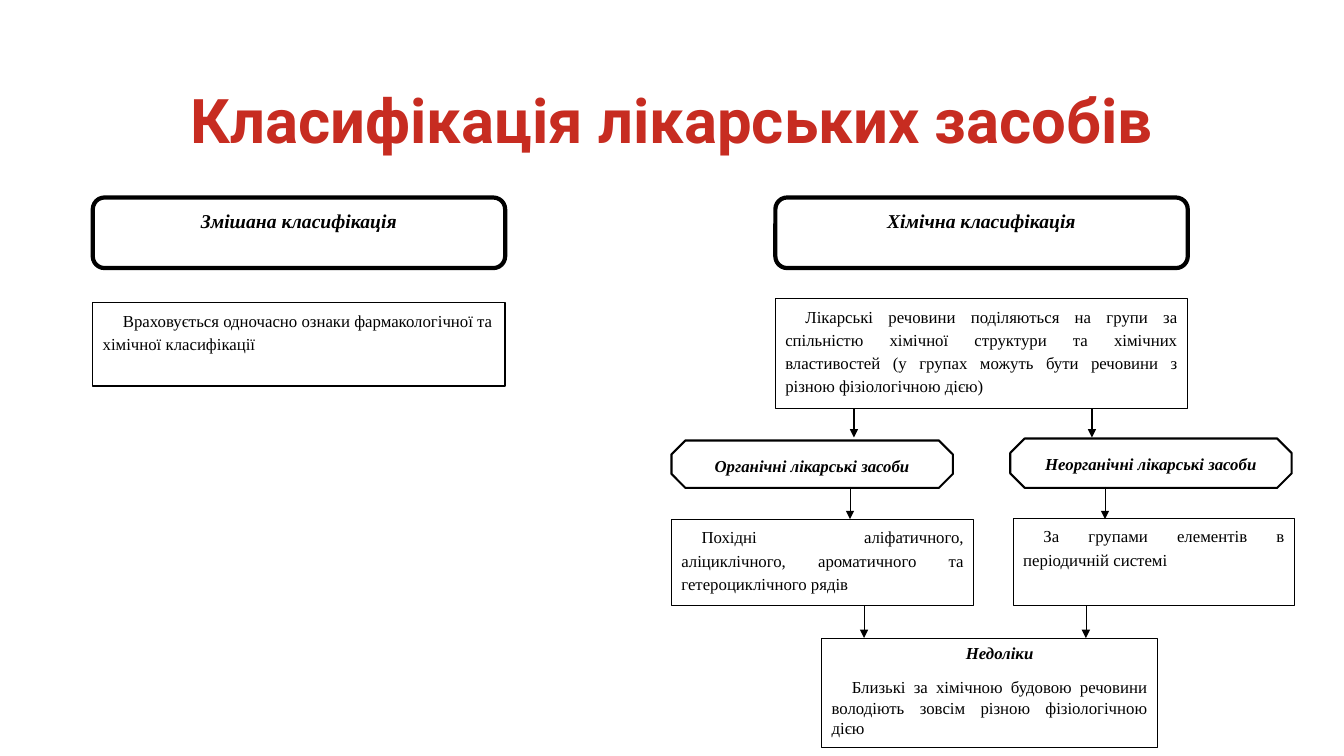
from lxml.etree import SubElement
from pptx import Presentation
from pptx.dml.color import RGBColor
from pptx.enum.shapes import MSO_CONNECTOR, MSO_SHAPE
from pptx.enum.text import MSO_ANCHOR, PP_ALIGN
from pptx.oxml.ns import qn
from pptx.util import Inches, Pt

COLORS = {"title": "C72C21", "ink": "000000", "paper": "FFFFFF"}
BODY_FONT = "Times New Roman"
HEADING = {"size": Pt(14), "bold": True, "italic": True}
LABEL = {"size": Pt(12), "bold": True, "italic": True}
BODY = {"size": Pt(12)}
FIRST_LINE = Inches(0.2)


class ClassificationSlide:
    """Draws the titled boxes and arrows of a classification scheme."""

    def __init__(self, presentation):
        self.slide = presentation.slides.add_slide(presentation.slide_layouts[6])

    def fill_paragraph(self, paragraph, text, style, align, spacing=1.15, indent=0,
                       font=BODY_FONT, color="ink"):
        layout = {"alignment": align, "line_spacing": spacing, "space_after": Pt(10)}
        for name, value in layout.items():
            setattr(paragraph, name, value)
        if indent:
            properties = paragraph._p.get_or_add_pPr()
            properties.set("marL", "0")
            properties.set("indent", str(indent))
        run = paragraph.add_run()
        run.text = text
        for name, value in {"name": font, **style}.items():
            setattr(run.font, name, value)
        run.font.color.rgb = RGBColor.from_string(COLORS[color])

    def title(self, text, left, top, width, height):
        box = self.slide.shapes.add_textbox(*map(Inches, (left, top, width, height)))
        box.text_frame.word_wrap = True
        box.text_frame.vertical_anchor = MSO_ANCHOR.MIDDLE
        self.fill_paragraph(box.text_frame.paragraphs[0], text, {"size": Pt(44), "bold": True},
                            PP_ALIGN.CENTER, font="Roboto", color="title")

    def box(self, kind, left, top, width, height, line_width, adjustment=None):
        shape = self.slide.shapes.add_shape(kind, *map(Inches, (left, top, width, height)))
        shape.shadow.inherit = False
        shape.fill.solid()
        shape.fill.fore_color.rgb = RGBColor.from_string(COLORS["paper"])
        shape.line.color.rgb = RGBColor.from_string(COLORS["ink"])
        shape.line.width = Pt(line_width)
        if adjustment:
            shape.adjustments[0] = adjustment
        shape.text_frame.word_wrap = True
        shape.text_frame.vertical_anchor = MSO_ANCHOR.TOP
        return shape.text_frame

    def heading(self, text, left):
        frame = self.box(MSO_SHAPE.ROUNDED_RECTANGLE, left, 1.96, 4.09, 0.7, 3, 0.167)
        self.fill_paragraph(frame.paragraphs[0], text, HEADING, PP_ALIGN.CENTER)

    def group(self, text, left, top, height):
        frame = self.box(MSO_SHAPE.OCTAGON, left, top, 2.79, height, 1.5, 0.293)
        self.fill_paragraph(frame.paragraphs[0], text, LABEL, PP_ALIGN.CENTER)

    def card(self, text, left, top, width, height, line_width=0.75, align=PP_ALIGN.JUSTIFY):
        frame = self.box(MSO_SHAPE.RECTANGLE, left, top, width, height, line_width)
        self.fill_paragraph(frame.paragraphs[0], text, BODY, align, indent=FIRST_LINE)

    def drawbacks(self, label, text, left, top, width, height):
        frame = self.box(MSO_SHAPE.RECTANGLE, left, top, width, height, 0.75)
        self.fill_paragraph(frame.paragraphs[0], label, LABEL, PP_ALIGN.CENTER, 1.0, FIRST_LINE)
        self.fill_paragraph(frame.add_paragraph(), text, BODY, PP_ALIGN.JUSTIFY, 1.0, FIRST_LINE)

    def arrow(self, x, top, bottom, line_width):
        connector = self.slide.shapes.add_connector(
            MSO_CONNECTOR.STRAIGHT, *map(Inches, (x, top, x, bottom)))
        connector.line.color.rgb = RGBColor.from_string(COLORS["ink"])
        connector.line.width = Pt(line_width)
        properties = connector._element.spPr
        SubElement(properties.get_or_add_ln(), qn("a:tailEnd"), type="triangle")
        SubElement(properties, qn("a:effectLst"))


def main():
    presentation = Presentation()
    presentation.slide_width = Inches(13.33)
    presentation.slide_height = Inches(7.5)
    scheme = ClassificationSlide(presentation)

    scheme.title("Класифікація лікарських засобів", 0.92, 0.4, 11.5, 1.45)

    scheme.heading("Змішана класифікація", 0.92)
    scheme.card("Враховується одночасно ознаки фармакологічної та хімічної класифікації",
                0.92, 3, 4.09, 0.83, 1, PP_ALIGN.LEFT)

    scheme.heading("Хімічна класифікація", 7.69)
    scheme.card("Лікарські речовини поділяються на групи за спільністю хімічної структури "
                "та хімічних властивостей (у групах можуть бути речовини з різною "
                "фізіологічною дією)", 7.69, 2.96, 4.09, 1.09, 1)
    scheme.group("Органічні лікарські засоби", 6.66, 4.37, 0.47)
    scheme.group("Неорганічні лікарські засоби", 10.02, 4.35, 0.49)
    scheme.card("Похідні аліфатичного, аліциклічного, ароматичного та гетероциклічного рядів",
                6.66, 5.15, 3, 0.86)
    scheme.card("За групами елементів в періодичній системі", 10.05, 5.14, 2.79, 0.87)
    scheme.drawbacks("Недоліки", "Близькі за хімічною будовою речовини володіють зовсім "
                     "різною фізіологічною дією", 8.15, 6.33, 3.33, 1.09)

    for top, bottom, line_width, columns in (
        (4.05, 4.34, 1, (8.47, 10.83)),
        (4.83, 5.15, 0.25, (8.43, 10.96)),
        (6.01, 6.33, 0.25, (8.57, 10.77)),
    ):
        for x in columns:
            scheme.arrow(x, top, bottom, line_width)

    presentation.save("out.pptx")


if __name__ == "__main__":
    main()
